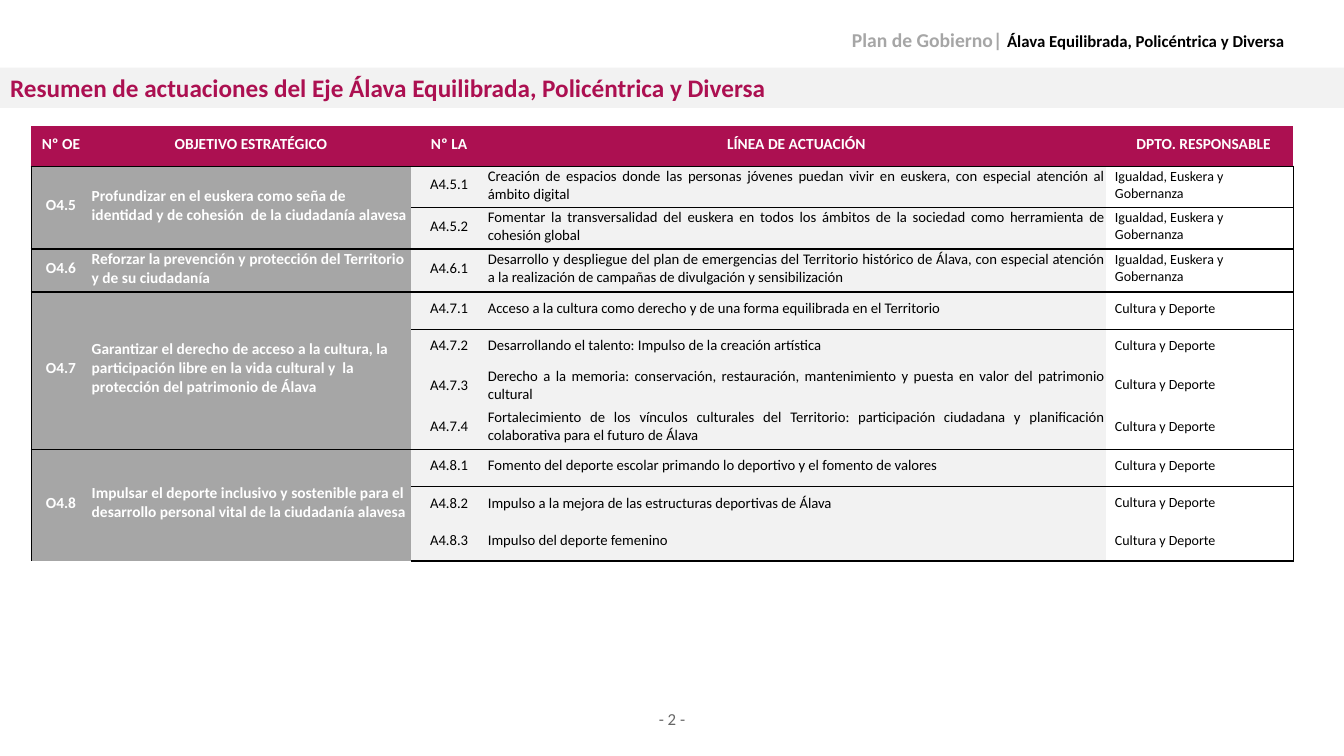
from dataclasses import dataclass
from itertools import accumulate

from lxml import etree
from pptx import Presentation
from pptx.dml.color import RGBColor
from pptx.enum import text as txt
from pptx.oxml.ns import qn
from pptx.util import Inches, Pt

FONT = "Calibri"
BURGUNDY = RGBColor(0xAC, 0x10, 0x51)
MID_GREY = RGBColor(0xA6, 0xA6, 0xA6)
PAGE_GREY = RGBColor(0x66, 0x66, 0x66)
PALE_GREY = RGBColor(0xF2, 0xF2, 0xF2)
WHITE = RGBColor(0xFF, 0xFF, 0xFF)
BLACK = RGBColor(0, 0, 0)

LEFT, CENTER, RIGHT, JUSTIFY = (
    txt.PP_ALIGN.LEFT, txt.PP_ALIGN.CENTER, txt.PP_ALIGN.RIGHT, txt.PP_ALIGN.JUSTIFY)
MIDDLE = txt.MSO_ANCHOR.MIDDLE
NO_STYLE_NO_GRID = "{2D5ABB26-0587-4C30-8999-92F81FD0307C}"


@dataclass(frozen=True)
class Style:
    size: float
    color: RGBColor
    bold: bool = False
    align: txt.PP_ALIGN = LEFT
    fill: RGBColor = WHITE


@dataclass(frozen=True)
class Action:
    text: str
    department: str


@dataclass(frozen=True)
class Objective:
    code: str
    text: str
    actions: tuple[Action, ...]


HEADER = Style(11, WHITE, True, CENTER, BURGUNDY)
OBJECTIVE_CODE = Style(11, WHITE, True, CENTER, MID_GREY)
OBJECTIVE_TEXT = Style(11, WHITE, True, LEFT, MID_GREY)
ACTION_CODE = Style(10.5, BLACK, False, CENTER, PALE_GREY)
ACTION_TEXT = Style(10.5, BLACK, False, JUSTIFY, PALE_GREY)
DEPARTMENT = Style(10, BLACK)

EQUALITY = "Igualdad, Euskera y Gobernanza"
CULTURE = "Cultura y Deporte"
HEADINGS = ("Nº OE", "OBJETIVO ESTRATÉGICO", "Nº LA", "LÍNEA DE ACTUACIÓN", "DPTO. RESPONSABLE")
COLUMN_WIDTHS = (0.51, 3.26, 0.67, 6.22, 1.86)
HEADER_HEIGHT, ROW_HEIGHT = 0.4, 0.37

OBJECTIVES = (
    Objective("4.5", "Profundizar en el euskera como seña de identidad y de cohesión  de la ciudadanía alavesa", (
        Action("Creación de espacios donde las personas jóvenes puedan vivir en euskera, "
               "con especial atención al ámbito digital", EQUALITY),
        Action("Fomentar la transversalidad del euskera en todos los ámbitos de la sociedad "
               "como herramienta de cohesión global", EQUALITY))),
    Objective("4.6", "Reforzar la prevención y protección del Territorio y de su ciudadanía", (
        Action("Desarrollo y despliegue del plan de emergencias del Territorio histórico de Álava, con especial "
               "atención a la realización de campañas de divulgación y sensibilización", EQUALITY),)),
    Objective("4.7", "Garantizar el derecho de acceso a la cultura, la participación libre en la vida cultural "
              "y  la protección del patrimonio de Álava", (
        Action("Acceso a la cultura como derecho y de una forma equilibrada en el Territorio", CULTURE),
        Action("Desarrollando el talento: Impulso de la creación artística", CULTURE),
        Action("Derecho a la memoria: conservación, restauración, mantenimiento y puesta en valor "
               "del patrimonio cultural", CULTURE),
        Action("Fortalecimiento de los vínculos culturales del Territorio: participación ciudadana "
               "y planificación colaborativa para el futuro de Álava", CULTURE))),
    Objective("4.8", "Impulsar el deporte inclusivo y sostenible para el desarrollo personal vital "
              "de la ciudadanía alavesa", (
        Action("Fomento del deporte escolar primando lo deportivo y el fomento de valores", CULTURE),
        Action("Impulso a la mejora de las estructuras deportivas de Álava", CULTURE),
        Action("Impulso del deporte femenino", CULTURE))),
)


def add_run(paragraph, content: str, style: Style) -> None:
    run = paragraph.add_run()
    run.text = content
    run.font.name = FONT
    run.font.size = Pt(style.size)
    run.font.bold = style.bold
    run.font.color.rgb = style.color


def add_label(slide, box: tuple[float, ...], align: txt.PP_ALIGN, *runs: tuple[str, Style]) -> None:
    frame = slide.shapes.add_textbox(*map(Inches, box)).text_frame
    frame.word_wrap = True
    frame.vertical_anchor = MIDDLE
    paragraph = frame.paragraphs[0]
    paragraph.alignment = align
    for content, style in runs:
        add_run(paragraph, content, style)


def add_border(cell, side: str) -> None:
    line = etree.SubElement(cell._tc.get_or_add_tcPr(), qn(f"a:ln{side}"), w=str(Pt(1)))
    fill = etree.SubElement(line, qn("a:solidFill"))
    etree.SubElement(fill, qn("a:srgbClr"), val=str(BLACK))


def fill_cell(cell, content: str, style: Style, borders: str = "") -> None:
    """Borders are given in schema order: L, R, T, B."""
    for side in borders:
        add_border(cell, side)
    cell.fill.solid()
    cell.fill.fore_color.rgb = style.fill
    cell.margin_left = cell.margin_right = cell.margin_top = Inches(0.01)
    cell.margin_bottom = Inches(0.05)
    cell.vertical_anchor = MIDDLE
    paragraph = cell.text_frame.paragraphs[0]
    paragraph.alignment = style.align
    paragraph._p.get_or_add_pPr().set("marL", str(Inches(0.08)))
    if content:
        add_run(paragraph, content, style)
    else:
        paragraph.font.size = Pt(style.size)


def add_objective(table, first_row: int, objective: Objective) -> None:
    last = len(objective.actions) - 1
    for index, action in enumerate(objective.actions):
        row = first_row + index
        edges = ("T" if index == 0 else "") + ("B" if index == last else "")
        code, goal = (f"O{objective.code}", objective.text) if index == 0 else ("", "")
        fill_cell(table.cell(row, 0), code, OBJECTIVE_CODE, "L" + edges)
        fill_cell(table.cell(row, 1), goal, OBJECTIVE_TEXT, edges)
        fill_cell(table.cell(row, 2), f"A{objective.code}.{index + 1}", ACTION_CODE, edges)
        fill_cell(table.cell(row, 3), action.text, ACTION_TEXT, edges)
        fill_cell(table.cell(row, 4), action.department, DEPARTMENT, "R" + edges)
    if last:
        for column in (0, 1):
            table.cell(first_row, column).merge(table.cell(first_row + last, column))


def add_summary_table(slide) -> None:
    starts = list(accumulate((len(o.actions) for o in OBJECTIVES), initial=1))
    height = HEADER_HEIGHT + ROW_HEIGHT * (starts[-1] - 1)
    table = slide.shapes.add_table(
        starts[-1], len(HEADINGS), Inches(0.31), Inches(1.25),
        Inches(sum(COLUMN_WIDTHS)), Inches(height)).table
    table.horz_banding = False
    table._tbl.tblPr.find(qn("a:tableStyleId")).text = NO_STYLE_NO_GRID
    for column, width in zip(table.columns, COLUMN_WIDTHS):
        column.width = Inches(width)
    for index, row in enumerate(table.rows):
        row.height = Inches(ROW_HEIGHT if index else HEADER_HEIGHT)
    for column, heading in enumerate(HEADINGS):
        fill_cell(table.cell(0, column), heading, HEADER)
    for start, objective in zip(starts, OBJECTIVES):
        add_objective(table, start, objective)


def add_title(slide) -> None:
    title = slide.shapes.title
    title.left, title.top, title.width, title.height = map(Inches, (0, 0.67, 13.43, 0.4))
    title.fill.solid()
    title.fill.fore_color.rgb = PALE_GREY
    frame = title.text_frame
    frame.auto_size = txt.MSO_AUTO_SIZE.NONE
    frame.vertical_anchor = txt.MSO_ANCHOR.TOP
    paragraph = frame.paragraphs[0]
    paragraph.alignment = LEFT
    paragraph.line_spacing = 1.0
    paragraph.space_before = Pt(0)
    add_run(paragraph, "Resumen de actuaciones del Eje Álava Equilibrada, Policéntrica y Diversa",
            Style(18, BURGUNDY, True))


def main() -> None:
    deck = Presentation()
    deck.slide_width, deck.slide_height = Inches(13.33), Inches(7.5)
    slide = deck.slides.add_slide(deck.slide_layouts[5])

    # Running head and title band
    add_label(slide, (7.6, 0.15, 5.24, 0.49), RIGHT,
              ("Plan de Gobierno| ", Style(14, MID_GREY, True)),
              ("Álava Equilibrada, Policéntrica y Diversa", Style(12, BLACK, True)))
    add_title(slide)

    # Objectives with their lines of action
    add_summary_table(slide)

    # Page number
    add_label(slide, (6.14, 6.98, 1.05, 0.3), CENTER, ("- 2 -", Style(12, PAGE_GREY)))

    deck.save("out.pptx")


if __name__ == "__main__":
    main()
